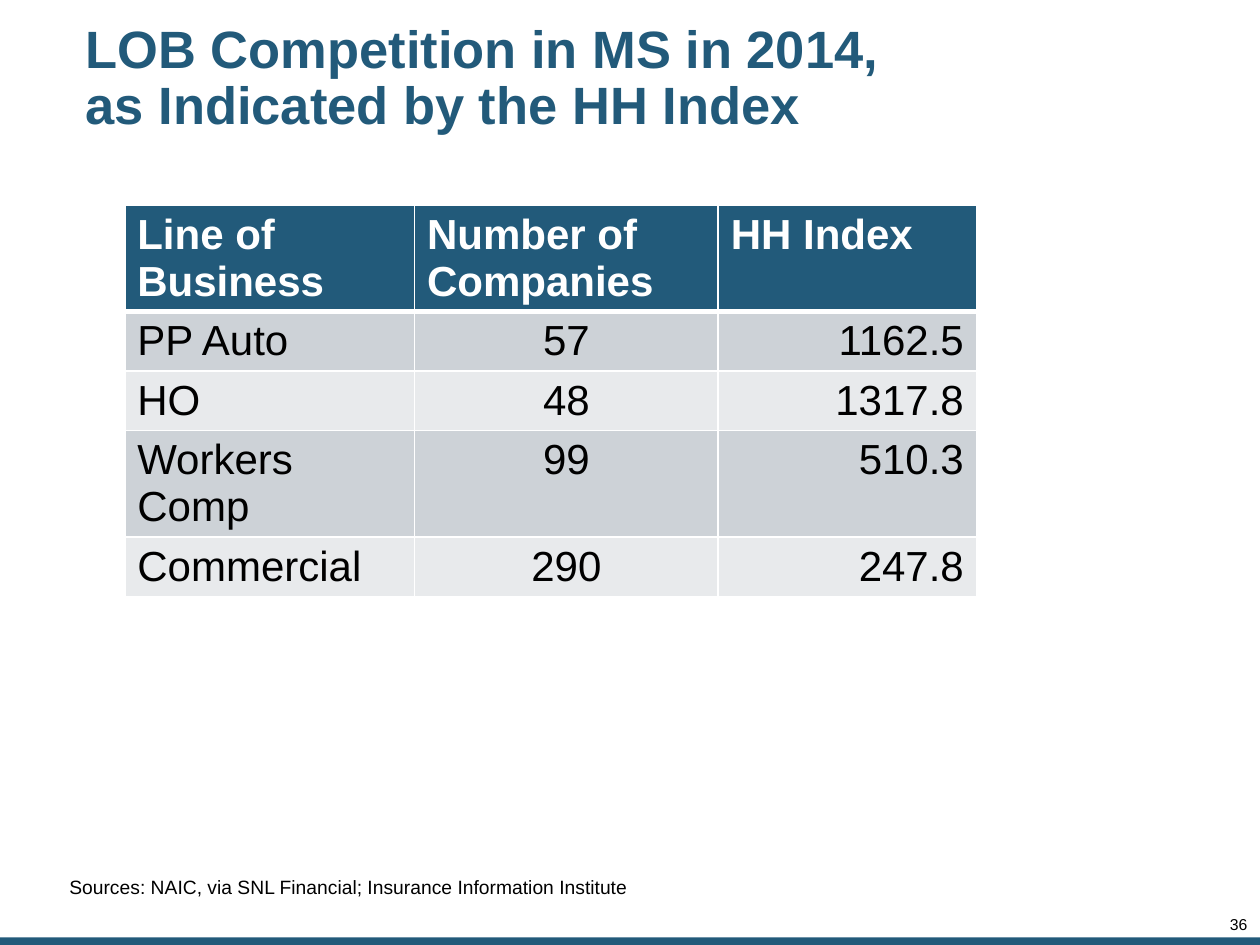
from lxml.etree import SubElement
from pptx import Presentation
from pptx.dml.color import RGBColor
from pptx.enum.shapes import MSO_SHAPE
from pptx.enum.text import MSO_ANCHOR, PP_ALIGN
from pptx.oxml.ns import qn
from pptx.util import Inches, Pt

COLORS = {
    "blue": "225A7A",
    "white": "FFFFFF",
    "black": "000000",
    "dark band": "CDD2D7",
    "light band": "E8EAEC",
}
ROWS = [
    ("Line of Business", "Number of Companies", "HH Index"),
    ("PP Auto", "57", "1162.5"),
    ("HO", "48", "1317.8"),
    ("Workers Comp", "99", "510.3"),
    ("Commercial", "290", "247.8"),
]
WIDTHS = [2.3, 2.41, 2.05]
ALIGNS = [PP_ALIGN.LEFT, PP_ALIGN.CENTER, PP_ALIGN.RIGHT]
ROW_HEIGHT = 0.41


def color(name):
    return RGBColor.from_string(COLORS[name])


def add_run(para, text, size, tint="black", bold=False):
    run = para.add_run()
    run.text = text
    font = run.font
    font.name = "Arial"
    font.size = Pt(size)
    font.bold = bold
    font.color.rgb = color(tint)


def set_frame(frame, anchor, insets):
    """Set wrap, anchor and the left, top, right and bottom insets."""
    frame.word_wrap = True
    frame.vertical_anchor = anchor
    left, top, right, bottom = map(Inches, insets)
    frame.margin_left, frame.margin_top = left, top
    frame.margin_right, frame.margin_bottom = right, bottom


def add_bar(slide):
    bar = slide.shapes.add_shape(
        MSO_SHAPE.RECTANGLE, Inches(0), Inches(7.44), Inches(10), Inches(0.06))
    bar.shadow.inherit = False
    bar.fill.solid()
    bar.fill.fore_color.rgb = color("blue")
    bar.line.fill.background()


def add_title(slide, lines):
    title = slide.shapes.title
    title.left, title.top = Inches(0.63), Inches(0.16)
    title.width, title.height = Inches(6.86), Inches(0.94)
    set_frame(title.text_frame, MSO_ANCHOR.MIDDLE, [0.05] * 4)
    para = title.text_frame.paragraphs[0]
    para.alignment = PP_ALIGN.LEFT
    para.line_spacing = 0.9
    for index, line in enumerate(lines):
        if index:
            para.add_line_break()
        add_run(para, line, 30, "blue", True)


def add_borders(cell, bottom):
    props = cell._tc.get_or_add_tcPr()
    sides = {"a:lnL": 1, "a:lnR": 1, "a:lnT": 1, "a:lnB": bottom}
    for index, (tag, width) in enumerate(sides.items()):
        line = SubElement(props, qn(tag), w=str(Pt(width)))
        fill = SubElement(line, qn("a:solidFill"))
        SubElement(fill, qn("a:srgbClr"), val=COLORS["white"])
        props.insert(index, line)


def fill_cell(cell, text, row, align):
    head = row == 0
    band = "blue" if head else "dark band" if row % 2 else "light band"
    cell.fill.solid()
    cell.fill.fore_color.rgb = color(band)
    # The header and the row below it share a thicker rule.
    add_borders(cell, 3 if head else 1)
    para = cell.text_frame.paragraphs[0]
    para.alignment = PP_ALIGN.LEFT if head else align
    add_run(para, text, 24, "white" if head else "black", head)


def add_grid(slide):
    table = slide.shapes.add_table(
        len(ROWS), len(WIDTHS), Inches(0.99), Inches(1.63),
        Inches(sum(WIDTHS)), Inches(ROW_HEIGHT * len(ROWS))).table
    for column, width in zip(table.columns, WIDTHS):
        column.width = Inches(width)
    for row, texts in enumerate(ROWS):
        for col, (text, align) in enumerate(zip(texts, ALIGNS)):
            fill_cell(table.cell(row, col), text, row, align)


def add_note(slide, text, box, size, anchor, insets, align, spacing):
    shape = slide.shapes.add_textbox(*map(Inches, box))
    set_frame(shape.text_frame, anchor, insets)
    para = shape.text_frame.paragraphs[0]
    para.alignment = align
    para.line_spacing = spacing
    add_run(para, text, size)


def main():
    deck = Presentation()
    deck.slide_width, deck.slide_height = Inches(10), Inches(7.5)
    slide = deck.slides.add_slide(deck.slide_layouts[5])
    add_bar(slide)
    add_title(slide, ["LOB Competition in MS in 2014,",
                      "as Indicated by the HH Index"])
    add_grid(slide)
    add_note(slide, "36", (9.41, 7.28, 0.49, 0.13), 9,
             MSO_ANCHOR.TOP, [0] * 4, PP_ALIGN.RIGHT, 0.85)
    add_note(slide,
             "Sources: NAIC, via SNL Financial; Insurance Information Institute",
             (0, 6.96, 8.28, 0.32), 11,
             MSO_ANCHOR.BOTTOM, [0.55, 0, 0, 0.15], PP_ALIGN.LEFT, 0.9)
    deck.save("out.pptx")


if __name__ == "__main__":
    main()
